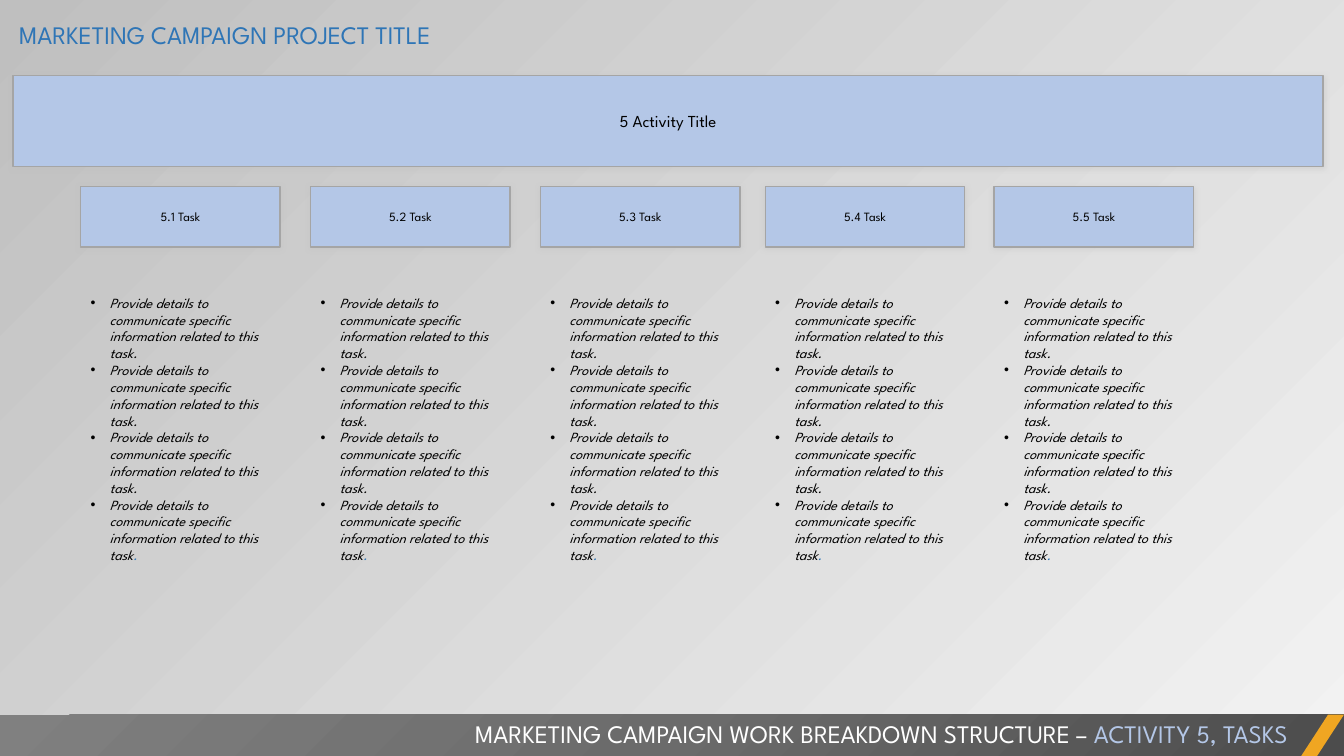
from dataclasses import dataclass
from lxml.etree import SubElement
from pptx import Presentation
from pptx.dml.color import RGBColor
from pptx.enum.shapes import MSO_SHAPE
from pptx.enum.text import MSO_ANCHOR, MSO_AUTO_SIZE, PP_ALIGN
from pptx.oxml import parse_xml
from pptx.oxml.ns import nsdecls, qn
from pptx.shapes.autoshape import Shape
from pptx.slide import Slide
from pptx.util import Emu, Inches, Pt

WIDTH, HEIGHT = Inches(13.333), Inches(7.5)
FONT = "League Spartan"
BLACK = RGBColor(0x00, 0x00, 0x00)
WHITE = RGBColor(0xFF, 0xFF, 0xFF)
BLUE = RGBColor(0x2E, 0x75, 0xB6)
PALE_BLUE = RGBColor(0xB4, 0xC7, 0xE7)
GREY = RGBColor(0xA5, 0xA5, 0xA5)
SHADOW_GREY = RGBColor(0xBF, 0xBF, 0xBF)
LIGHT_GREY = RGBColor(0xF2, 0xF2, 0xF2)
AMBER = RGBColor(0xF0, 0xA6, 0x22)
BAR_STOPS = (
    (0, RGBColor(0x4C, 0x4C, 0x4C)),
    (50, RGBColor(0x6B, 0x6B, 0x6B)),
    (100, RGBColor(0x80, 0x80, 0x80)),
)
DETAIL = "Provide details to communicate specific information related to this task"
DETAIL_COUNT = 4


@dataclass(frozen=True)
class Area:
    """Percentages of the slide's width and height."""

    left: float
    top: float
    width: float
    height: float

    def lengths(self) -> tuple[Emu, Emu, Emu, Emu]:
        return (
            Emu(round(WIDTH * self.left / 100)),
            Emu(round(HEIGHT * self.top / 100)),
            Emu(round(WIDTH * self.width / 100)),
            Emu(round(HEIGHT * self.height / 100)),
        )


@dataclass(frozen=True)
class Span:
    text: str
    color: RGBColor = BLACK


@dataclass(frozen=True)
class Task:
    label: str
    left: float


TASKS = (
    Task("5.1 Task", 6),
    Task("5.2 Task", 23.11),
    Task("5.3 Task", 40.21),
    Task("5.4 Task", 56.94),
    Task("5.5 Task", 73.97),
)


def write(
    box: Shape,
    paragraphs: list[list[Span]],
    *,
    size: float,
    align: PP_ALIGN = PP_ALIGN.LEFT,
    italic: bool = False,
    bullet: bool = False,
) -> None:
    frame = box.text_frame
    frame.word_wrap = True
    for index, spans in enumerate(paragraphs):
        para = frame.paragraphs[0] if index == 0 else frame.add_paragraph()
        para.alignment = align
        if bullet:
            properties = para._p.get_or_add_pPr()
            properties.set("marL", str(Inches(0.19)))
            properties.set("indent", str(-Inches(0.19)))
            SubElement(properties, qn("a:buFont"), typeface="Arial")
            SubElement(properties, qn("a:buChar"), char="•")
        for span in spans:
            run = para.add_run()
            run.text = span.text
            run.font.name = FONT
            run.font.size = Pt(size)
            run.font.italic = italic
            run.font.color.rgb = span.color


def add_text(page: Slide, area: Area, paragraphs: list[list[Span]], **text_format) -> None:
    box = page.shapes.add_textbox(*area.lengths())
    box.text_frame.auto_size = MSO_AUTO_SIZE.SHAPE_TO_FIT_TEXT
    write(box, paragraphs, **text_format)


def add_plain(page: Slide, kind: MSO_SHAPE, area: Area, color: RGBColor) -> Shape:
    shape = page.shapes.add_shape(kind, *area.lengths())
    shape.shadow.inherit = False
    shape.fill.solid()
    shape.fill.fore_color.rgb = color
    shape.line.fill.background()
    return shape


def add_card(page: Slide, area: Area, label: str, size: float) -> None:
    card = add_plain(page, MSO_SHAPE.RECTANGLE, area, PALE_BLUE)
    card.line.color.rgb = GREY
    card.line.width = Pt(1)
    effects = card._element.spPr.find(qn("a:effectLst"))
    shadow = SubElement(
        effects, qn("a:outerShdw"), blurRad=str(Pt(4)), dist=str(Pt(1)),
        dir="5400000", algn="t", rotWithShape="0",
    )
    tint = SubElement(shadow, qn("a:srgbClr"), val=str(SHADOW_GREY))
    SubElement(tint, qn("a:alpha"), val="40000")
    card.text_frame.vertical_anchor = MSO_ANCHOR.MIDDLE
    write(card, [[Span(label)]], size=size, align=PP_ALIGN.CENTER)


def paint_background(page: Slide) -> None:
    fill = page.background.fill
    fill.gradient()
    fill.gradient_angle = 135
    for stop, position, color in zip(fill.gradient_stops, (0, 1), (LIGHT_GREY, SHADOW_GREY)):
        stop.position = position
        stop.color.rgb = color


def add_footer(page: Slide) -> None:
    bar = add_plain(page, MSO_SHAPE.RECTANGLE, Area(0, 94.53, 100, 5.6), GREY)
    stops = "".join(
        f'<a:gs pos="{position * 1000}"><a:srgbClr val="{color}"/></a:gs>'
        for position, color in BAR_STOPS
    )
    gradient = parse_xml(
        f'<a:gradFill {nsdecls("a")} rotWithShape="1"><a:gsLst>{stops}</a:gsLst>'
        '<a:path path="circle"><a:fillToRect l="100000" t="100000"/></a:path></a:gradFill>'
    )
    properties = bar._element.spPr
    properties.replace(properties.find(qn("a:solidFill")), gradient)
    accent = add_plain(page, MSO_SHAPE.PARALLELOGRAM, Area(96.77, 94.53, 3.23, 5.6), AMBER)
    accent.adjustments[0] = 0.65
    heading = [
        Span("MARKETING CAMPAIGN WORK BREAKDOWN STRUCTURE – ", WHITE),
        Span("ACTIVITY 5, TASKS", PALE_BLUE),
    ]
    add_text(page, Area(-0.9, 94.4, 97.45, 5.33), [heading], size=18, align=PP_ALIGN.RIGHT)


def add_task(page: Slide, task: Task) -> None:
    add_card(page, Area(task.left, 24.67, 14.85, 8), task.label, 9)
    details = [[Span(DETAIL + ".")] for _ in range(DETAIL_COUNT - 1)]
    details.append([Span(DETAIL), Span(".", BLUE)])
    add_text(page, Area(task.left, 38.27, 14.85, 40), details, size=10, italic=True, bullet=True)


def main() -> None:
    deck = Presentation()
    deck.slide_width, deck.slide_height = WIDTH, HEIGHT
    page = deck.slides.add_slide(deck.slide_layouts[6])
    paint_background(page)
    add_card(page, Area(0.98, 10, 97.45, 12), "5 Activity Title", 12)
    add_footer(page)
    title = [Span("MARKETING CAMPAIGN PROJECT TITLE", BLUE)]
    add_text(page, Area(0.68, 1.87, 75.84, 5.33), [title], size=18)
    for task in TASKS:
        add_task(page, task)
    deck.save("out.pptx")


if __name__ == "__main__":
    main()
